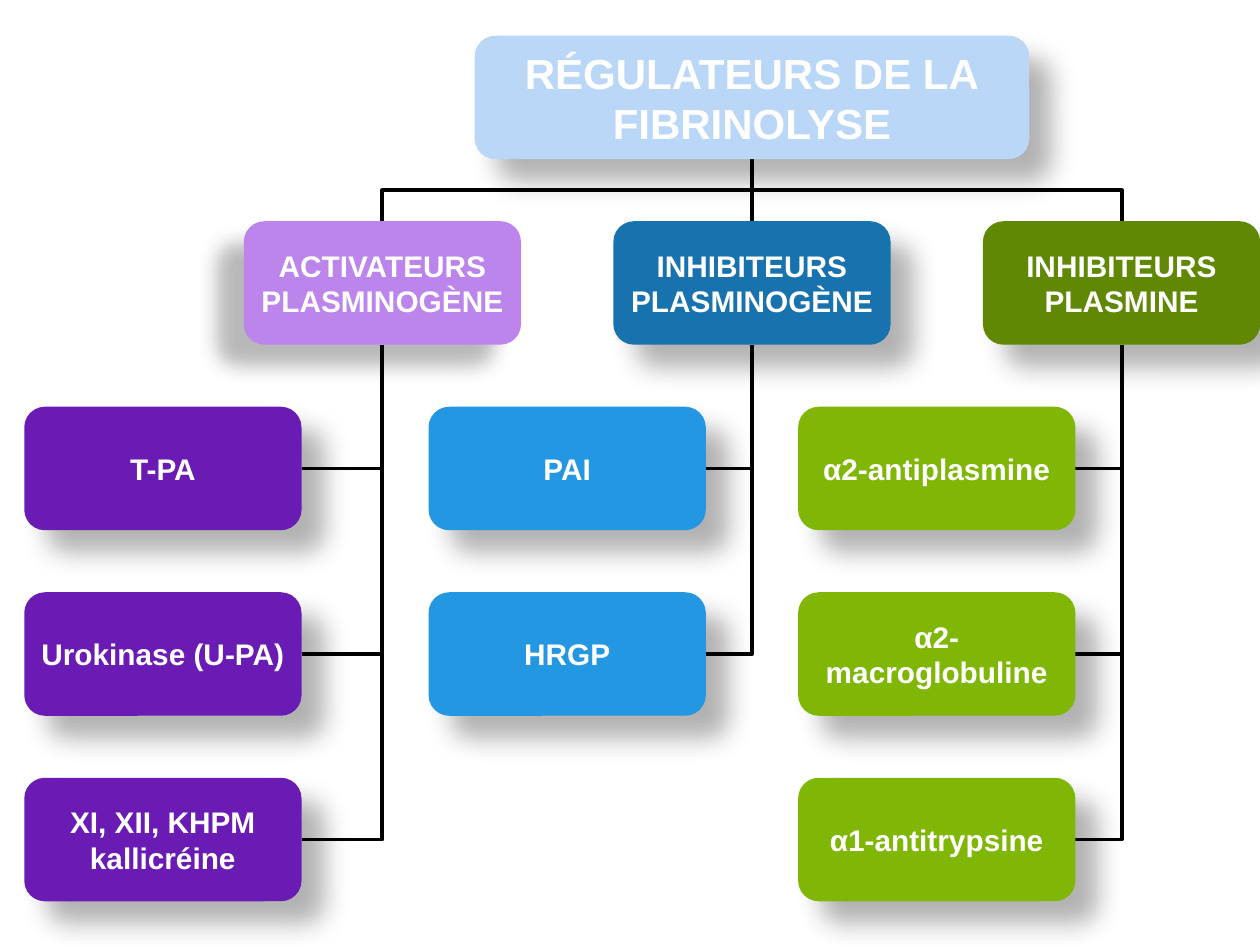
from lxml import etree
from pptx import Presentation
from pptx import util as u
from pptx.dml.color import RGBColor
from pptx.enum import shapes, text
from pptx.oxml.ns import qn

TITLE = ["RÉGULATEURS DE LA", "FIBRINOLYSE"]
BRANCHES = [
    {"head": ["ACTIVATEURS", "PLASMINOGÈNE"], "gap": 1.63,
     "tone": "violet", "shade": "left",
     "kids": [["T-PA"], ["Urokinase (U-PA)"], ["XI, XII, KHPM", "kallicréine"]]},
    {"head": ["INHIBITEURS", "PLASMINOGÈNE"], "gap": 0.93,
     "tone": "blue", "shade": "right",
     "kids": [["PAI"], ["HRGP"]]},
    {"head": ["INHIBITEURS", "PLASMINE"], "gap": 0.93,
     "tone": "green", "shade": "right",
     "kids": [["α2-antiplasmine"], ["α2-macroglobuline"], ["α1-antitrypsine"]]},
]

THEME = {
    "font": "Arial", "ink": "FFFFFF", "line": "000000", "weight": 2.25,
    "root": "BBD7F8", "big": 24, "small": 17,
    "violet": ("BB85EC", "6A1BB4"),
    "blue": ("1772AD", "2397E2"),
    "green": ("608805", "80B606"),
    "right": {"alpha": 30, "blur": 15, "dist": 18, "dir": 45},
    "left": {"alpha": 28, "blur": 11.8, "dist": 19.7, "dir": 141},
}
FRAME = {"word_wrap": True, "auto_size": text.MSO_AUTO_SIZE.NONE,
         "vertical_anchor": text.MSO_ANCHOR.MIDDLE,
         "margin_left": 0, "margin_right": 0, "margin_top": 0, "margin_bottom": 0}

WIDE, TALL = 25.4, 19.05
BOX_W, BOX_H, ROOT_W = 5.59, 2.49, 11.18
TOP, ROW = 0.72, 3.74
MID, COL = 15.16, 7.45


def put(obj, vals):
    for key, val in vals.items():
        setattr(obj, key, val)


def row_top(row):
    return TOP + row * ROW


def write(shape, lines, size):
    frame = shape.text_frame
    put(frame, FRAME)
    for i, line in enumerate(lines):
        para = frame.add_paragraph() if i else frame.paragraphs[0]
        para.alignment = text.PP_ALIGN.CENTER
        run = para.add_run()
        run.text = line
        put(run.font, {"name": THEME["font"], "size": u.Pt(size), "bold": True})
        run.font.color.rgb = RGBColor.from_string(THEME["ink"])


def shade(shape, look):
    shape.shadow.inherit = False
    effects = shape._element.spPr.find(qn("a:effectLst"))
    outer = etree.SubElement(effects, qn("a:outerShdw"), {
        "blurRad": str(u.Pt(look["blur"])), "dist": str(u.Pt(look["dist"])),
        "dir": str(look["dir"] * 60000), "algn": "ctr", "rotWithShape": "0"})
    color = etree.SubElement(outer, qn("a:srgbClr"), val="000000")
    etree.SubElement(color, qn("a:alpha"), val=str(look["alpha"] * 1000))


def add_box(slide, left, row, width, fill, look, lines=()):
    box = slide.shapes.add_shape(
        shapes.MSO_SHAPE.ROUNDED_RECTANGLE,
        u.Cm(left), u.Cm(row_top(row)), u.Cm(width), u.Cm(BOX_H))
    box.fill.solid()
    box.fill.fore_color.rgb = RGBColor.from_string(fill)
    box.line.fill.background()
    shade(box, look)
    if lines:
        write(box, lines, THEME["small"])


def add_link(slide, kind, start, end, bend=None, turn=0):
    link = slide.shapes.add_connector(kind, *map(u.Cm, start + end))
    link.line.color.rgb = RGBColor.from_string(THEME["line"])
    link.line.width = u.Pt(THEME["weight"])
    props = link._element.spPr
    etree.SubElement(props, qn("a:effectLst"))
    if bend:
        props.find(qn("a:prstGeom")).set("prst", bend)
    if turn:
        props.find(qn("a:xfrm")).set("rot", str(turn * 60000))


def link_root(slide, x):
    kind = shapes.MSO_CONNECTOR
    low, high = row_top(1), row_top(0) + BOX_H
    if x == MID:
        add_link(slide, kind.STRAIGHT, (x, low), (x, high))
        return
    side = 1 if x > MID else -1
    mid_x, mid_y = (x + MID) / 2, (low + high) / 2
    reach, half = abs(x - MID) / 2, side * (low - high) / 2
    add_link(slide, kind.ELBOW, (mid_x - half, mid_y + reach),
             (mid_x + half, mid_y - reach), turn=270 if side > 0 else 90)


def main():
    deck = Presentation()
    put(deck, {"slide_width": u.Cm(WIDE), "slide_height": u.Cm(TALL)})
    slide = deck.slides.add_slide(deck.slide_layouts[5])

    spots = [(MID + (i - 1) * COL, b) for i, b in enumerate(BRANCHES)]
    for x, branch in spots:
        link_root(slide, x)
        for row in range(2, 2 + len(branch["kids"])):
            add_link(slide, shapes.MSO_CONNECTOR.ELBOW,
                     (x - branch["gap"], row_top(row) + BOX_H / 2),
                     (x, row_top(1) + BOX_H), bend="bentConnector2")

    left = MID - ROOT_W / 2
    add_box(slide, left, 0, ROOT_W, THEME["root"], THEME["right"])
    title = slide.shapes.title
    put(title, {"left": u.Cm(left), "top": u.Cm(TOP),
                "width": u.Cm(ROOT_W), "height": u.Cm(BOX_H)})
    write(title, TITLE, THEME["big"])
    slide.shapes._spTree.append(title._element)

    for x, branch in spots:
        dark, light = THEME[branch["tone"]]
        add_box(slide, x - BOX_W / 2, 1, BOX_W, dark,
                THEME[branch["shade"]], branch["head"])
        for row, lines in enumerate(branch["kids"], 2):
            add_box(slide, x - branch["gap"] - BOX_W, row, BOX_W, light,
                    THEME["right"], lines)

    deck.save("out.pptx")


if __name__ == "__main__":
    main()
